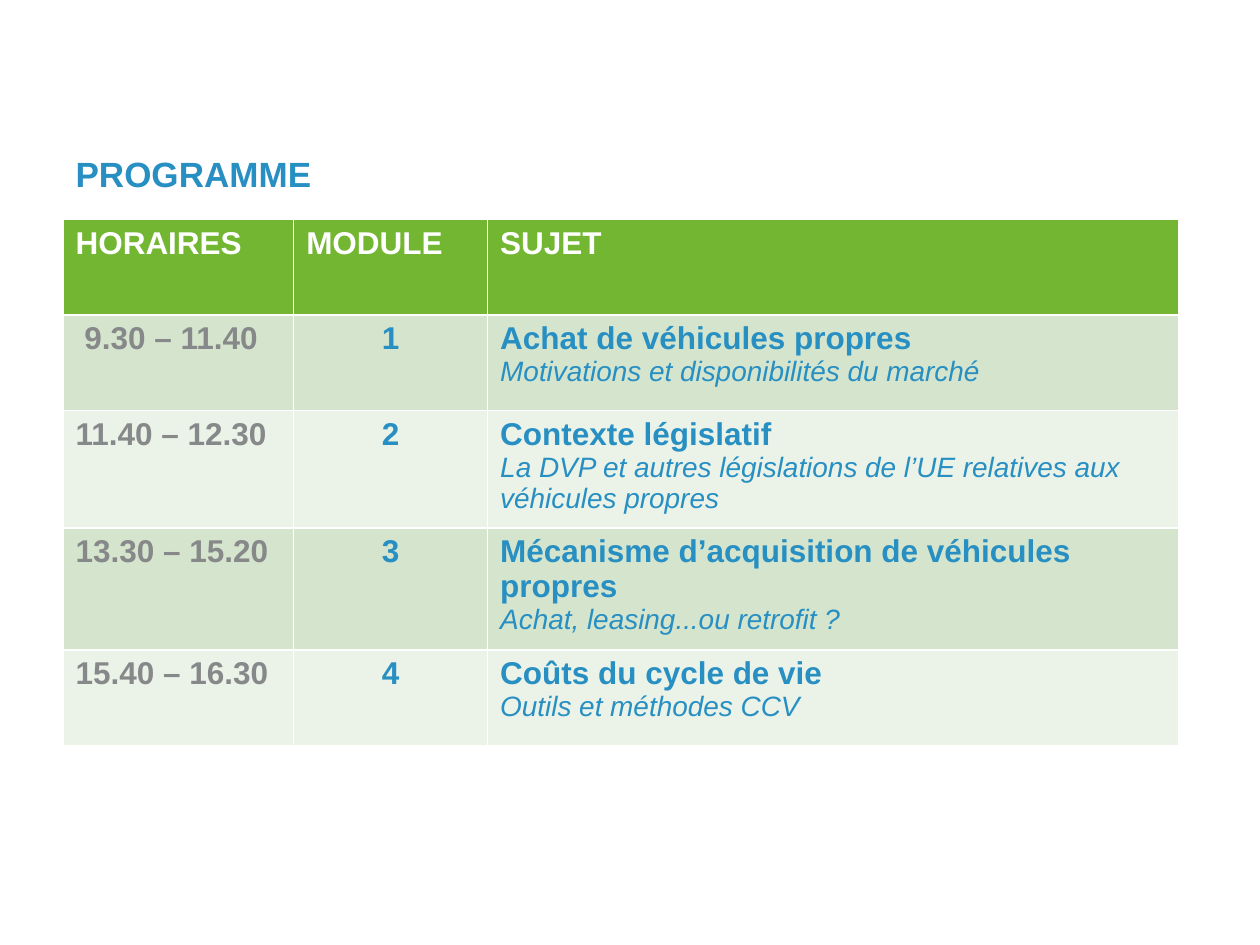
from dataclasses import dataclass

import pptx
import pptx.dml.color
import pptx.enum.text
import pptx.util
from pptx.util import Cm


@dataclass(frozen=True)
class Theme:
    font: str = "Arial"
    white: str = "FFFFFF"
    blue: str = "288FC3"
    grey: str = "87888A"
    green: str = "73B632"
    bands: tuple = ("D5E5CD", "EBF3E8")
    title_size: int = 20
    text_size: int = 18
    detail_size: int = 16


THEME = Theme()
LEFT, WIDTH = Cm(1.27), Cm(22.5)
COLUMN_WIDTHS = (4.65, 3.91, 13.94)
ROW_HEIGHTS = (1.93, 1.93, 2.36, 2.46, 1.93)
HEADINGS = ("HORAIRES", "MODULE", "SUJET")
SESSIONS = (
    (" 9.30 – 11.40", "Achat de véhicules propres",
     "Motivations et disponibilités du marché"),
    ("11.40 – 12.30", "Contexte législatif",
     "La DVP et autres législations de l’UE relatives aux véhicules propres"),
    ("13.30 – 15.20", "Mécanisme d’acquisition de véhicules propres",
     "Achat, leasing...ou retrofit ?"),
    ("15.40 – 16.30", "Coûts du cycle de vie",
     "Outils et méthodes CCV"),
)


def rgb(value):
    return pptx.dml.color.RGBColor.from_string(value)


def format_text(para, size, color, bold=True, italic=False,
                align=pptx.enum.text.PP_ALIGN.LEFT):
    para.alignment = align
    for span in para.runs:
        font = span.font
        font.name = THEME.font
        font.size = pptx.util.Pt(size)
        font.bold = bold
        font.italic = italic
        font.color.rgb = rgb(color)


def add_title(page, text):
    box = page.shapes.title
    box.left, box.top, box.width, box.height = LEFT, Cm(2.95), WIDTH, Cm(1.8)
    frame = box.text_frame
    frame.text = text
    frame.vertical_anchor = pptx.enum.text.MSO_ANCHOR.TOP
    format_text(frame.paragraphs[0], THEME.title_size, THEME.blue)


def fill_cell(cell, text, fill, color, **style):
    cell.fill.solid()
    cell.fill.fore_color.rgb = rgb(fill)
    cell.text_frame.text = text
    format_text(cell.text_frame.paragraphs[0], THEME.text_size, color, **style)


def add_detail(cell, text):
    """Add an italic line below the subject of a session."""
    para = cell.text_frame.add_paragraph()
    para.text = text
    format_text(para, THEME.detail_size, THEME.blue, bold=False, italic=True)


def add_programme(page):
    """Add the timetable; the default table style draws its white rules."""
    table = page.shapes.add_table(
        len(ROW_HEIGHTS), len(COLUMN_WIDTHS),
        LEFT, Cm(4.42), WIDTH, Cm(sum(ROW_HEIGHTS))).table
    for column, width in zip(table.columns, COLUMN_WIDTHS):
        column.width = Cm(width)
    for row, height in zip(table.rows, ROW_HEIGHTS):
        row.height = Cm(height)

    for index, heading in enumerate(HEADINGS):
        fill_cell(table.cell(0, index), heading, THEME.green, THEME.white)
    for number, (hours, subject, detail) in enumerate(SESSIONS, start=1):
        band = THEME.bands[(number - 1) % 2]
        fill_cell(table.cell(number, 0), hours, band, THEME.grey)
        fill_cell(table.cell(number, 1), str(number), band, THEME.blue,
                  align=pptx.enum.text.PP_ALIGN.CENTER)
        fill_cell(table.cell(number, 2), subject, band, THEME.blue)
        add_detail(table.cell(number, 2), detail)


def main():
    deck = pptx.Presentation()
    deck.slide_width, deck.slide_height = Cm(25.4), Cm(19.05)
    page = deck.slides.add_slide(deck.slide_layouts.get_by_name("Title Only"))
    add_title(page, "PROGRAMME")
    add_programme(page)
    deck.save("out.pptx")


if __name__ == "__main__":
    main()
